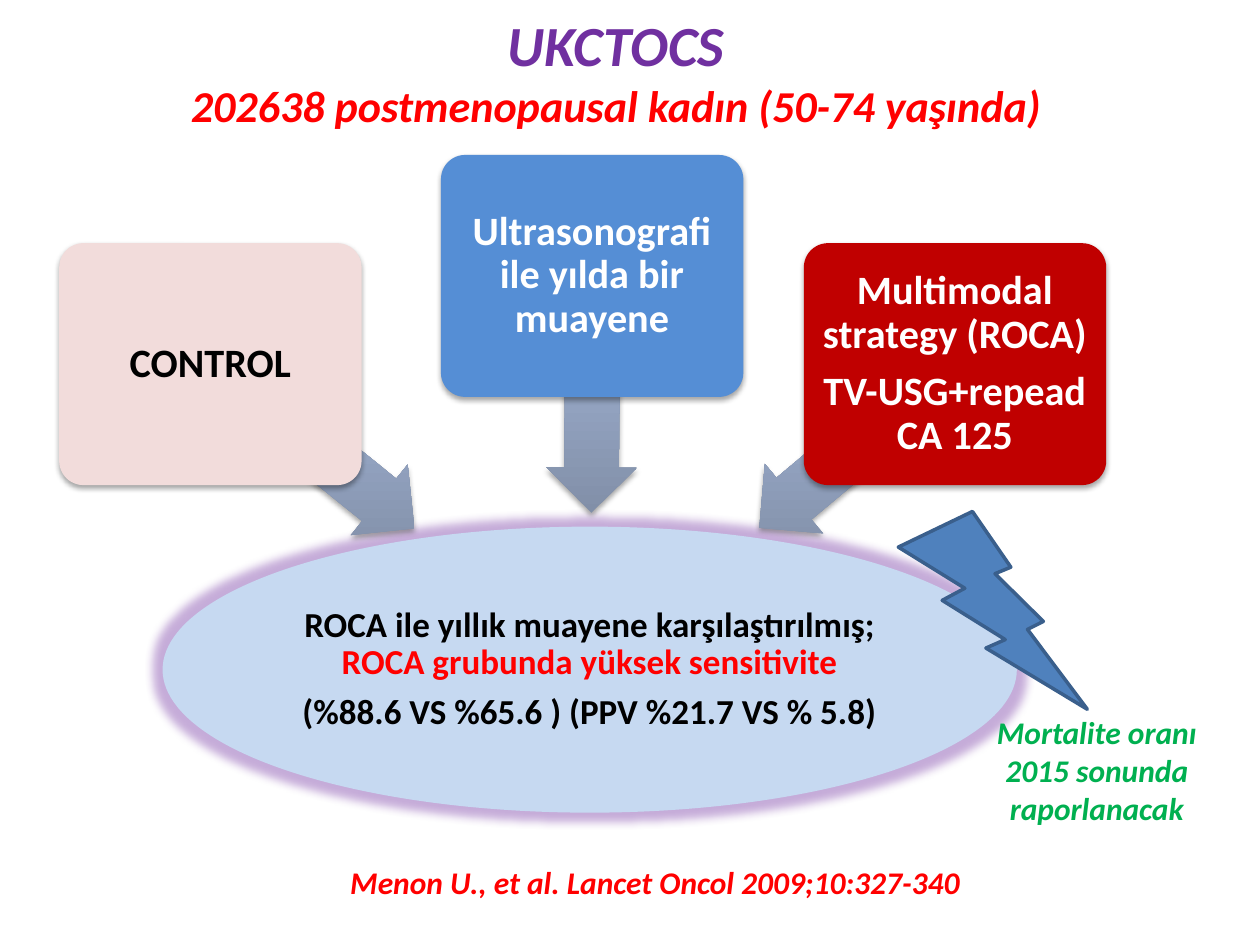
import dataclasses

import pptx
import pptx.dml.color
import pptx.enum.shapes
import pptx.enum.text
import pptx.util
from lxml import etree

Inches = pptx.util.Inches
Pt = pptx.util.Pt
Shapes = pptx.enum.shapes.MSO_SHAPE
DRAWING = "http://schemas.openxmlformats.org/drawingml/2006/main"


@dataclasses.dataclass(frozen=True)
class Theme:
    font: str = "Calibri"
    black: str = "000000"
    white: str = "FFFFFF"
    red: str = "FF0000"
    purple: str = "7030A0"
    green: str = "00B050"
    control: str = "F2DCDB"
    ultrasound: str = "558ED5"
    multimodal: str = "C00000"
    findings: str = "C6D9F1"
    bolt: str = "4F81BD"
    bolt_edge: str = "3A5F8C"
    arrow_dark: str = "818FA8"
    arrow_light: str = "A7BADC"
    title_size: float = 32.4
    subtitle_size: float = 25.2
    arm_size: float = 23
    findings_size: float = 20
    note_size: float = 18


@dataclasses.dataclass(frozen=True)
class Box:
    left: float
    top: float
    width: float
    height: float

    def inches(self):
        return [Inches(v) for v in (self.left, self.top, self.width, self.height)]

    def inner(self, left, top, width, height):
        return Box(self.left + left, self.top + top, width, height)


THEME = Theme()


def rgb(value):
    return pptx.dml.color.RGBColor.from_string(value)


def add_effect(shape, kind, color, alpha, **settings):
    effects = shape.element.spPr.find(f"{{{DRAWING}}}effectLst")
    effect = etree.SubElement(effects, f"{{{DRAWING}}}{kind}",
                              {key: str(value) for key, value in settings.items()})
    tint = etree.SubElement(effect, f"{{{DRAWING}}}srgbClr", val=color)
    etree.SubElement(tint, f"{{{DRAWING}}}alpha", val=str(alpha * 1000))


def add_soft_shadow(shape):
    add_effect(shape, "outerShdw", THEME.black, 35, blurRad=Pt(3.1), dist=Pt(1.8),
               dir=90 * 60000, rotWithShape=0)


def add_plain_shape(slide, preset, box, fill=None):
    shape = slide.shapes.add_shape(preset, *box.inches())
    shape.shadow.inherit = False
    shape.line.fill.background()
    if fill:
        shape.fill.solid()
        shape.fill.fore_color.rgb = rgb(fill)
    else:
        shape.fill.background()
    return shape


def set_insets(frame, inset):
    frame.margin_left = frame.margin_right = Inches(inset)
    frame.margin_top = frame.margin_bottom = Inches(inset)


def write(frame, paragraphs, italic=False, tight=False):
    frame.word_wrap = True
    frame.auto_size = pptx.enum.text.MSO_AUTO_SIZE.NONE
    frame.vertical_anchor = pptx.enum.text.MSO_ANCHOR.MIDDLE
    for index, (size, runs) in enumerate(paragraphs):
        paragraph = frame.add_paragraph() if index else frame.paragraphs[0]
        paragraph.alignment = pptx.enum.text.PP_ALIGN.CENTER
        paragraph.font.name = THEME.font
        paragraph.font.size = Pt(size)
        paragraph.font.bold = True
        paragraph.font.italic = italic
        if tight:
            paragraph.line_spacing = 0.9
            paragraph.space_after = Pt(0.35 * size)
        for text, color in runs:
            run = paragraph.add_run()
            run.text = text
            if len(runs) > 1:
                run.font.color.rgb = rgb(color)
        if len(runs) == 1:
            paragraph.font.color.rgb = rgb(runs[0][1])


def add_heading(slide, box):
    title = slide.shapes.title
    title.left, title.top, title.width, title.height = box.inches()
    frame = title.text_frame
    frame.margin_top = 0
    frame.margin_bottom = Inches(0.34)
    write(frame, [
        (THEME.title_size, [("UKCTOCS", THEME.purple)]),
        (THEME.subtitle_size,
         [("202638 postmenopausal kadın (50-74 yaşında)", THEME.red)]),
    ], italic=True)


def add_findings(slide, box):
    ellipse = add_plain_shape(slide, Shapes.OVAL, box, THEME.findings)
    add_effect(ellipse, "glow", THEME.purple, 40, rad=Pt(11))
    set_insets(ellipse.text_frame, 0.01)
    write(ellipse.text_frame, [
        (THEME.findings_size, [
            ("ROCA ile yıllık muayene karşılaştırılmış; ", THEME.black),
            ("ROCA grubunda yüksek sensitivite", THEME.red)]),
        (THEME.findings_size,
         [("(%88.6 VS %65.6 ) (PPV %21.7 VS % 5.8)", THEME.black)]),
    ], tight=True)


def add_arrow(slide, box, rotation):
    arrow = add_plain_shape(slide, Shapes.LEFT_ARROW, box)
    arrow.rotation = rotation
    arrow.adjustments[0] = 0.6
    arrow.adjustments[1] = 0.5
    arrow.fill.gradient()
    arrow.fill.gradient_angle = 90
    for stop, color in zip(arrow.fill.gradient_stops,
                           (THEME.arrow_dark, THEME.arrow_light)):
        stop.color.rgb = rgb(color)
    arrow.element.spPr.find(f"{{{DRAWING}}}gradFill").set("rotWithShape", "0")
    add_soft_shadow(arrow)


def add_study_arm(slide, box, lines, fill, color):
    arm = add_plain_shape(slide, Shapes.ROUNDED_RECTANGLE, box, fill)
    arm.adjustments[0] = 0.1
    add_soft_shadow(arm)
    set_insets(arm.text_frame, 0.05)
    write(arm.text_frame,
          [(THEME.arm_size, [(line, color)]) for line in lines], tight=True)


def add_study_arms(slide, box):
    arms = [
        (0, 0.7, (0.97, 1.95, 2.08), 218.9, ["CONTROL"],
         THEME.control, THEME.black),
        (3.03, 0, (3.29, 1.54, 1.88), 270.4,
         ["Ultrasonografi ile yılda bir muayene"], THEME.ultrasound, THEME.white),
        (5.91, 0.7, (5.32, 1.95, 2.02), 320,
         ["Multimodal strategy (ROCA)", "TV-USG+repead CA 125"],
         THEME.multimodal, THEME.white),
    ]
    for left, top, arrow, rotation, lines, fill, color in arms:
        add_arrow(slide, box.inner(*arrow, 0.72), rotation)
        add_study_arm(slide, box.inner(left, top, 2.4, 1.92), lines, fill, color)


def add_citation(slide, box):
    citation = slide.shapes.add_textbox(*box.inches())
    write(citation.text_frame, [(THEME.note_size, [
        ("Menon U., et al. Lancet Oncol 2009;10:327-340", THEME.red)])], italic=True)


def add_mortality_note(slide, box):
    bolt = add_plain_shape(slide, Shapes.LIGHTNING_BOLT,
                           box.inner(0, 0, 1.5, 1.57), THEME.bolt)
    bolt.line.color.rgb = rgb(THEME.bolt_edge)
    bolt.line.width = Pt(2)
    note = add_plain_shape(slide, Shapes.FOLDED_CORNER,
                           box.inner(0.55, 1.58, 2.05, 1.13))
    write(note.text_frame, [(THEME.note_size, [
        ("Mortalite oranı 2015 sonunda raporlanacak", THEME.green)])], italic=True)


def main():
    deck = pptx.Presentation()
    deck.slide_width = Inches(10)
    deck.slide_height = Inches(7.5)
    slide = deck.slides.add_slide(deck.slide_layouts[5])
    add_heading(slide, Box(0.43, 0.21, 8.92, 1.04))
    add_findings(slide, Box(1.29, 4.18, 6.78, 2.27))
    add_study_arms(slide, Box(0.47, 1.23, 8.31, 2.95))
    add_citation(slide, Box(1.54, 6.5, 7.32, 1))
    add_mortality_note(slide, Box(7.13, 4.06, 2.6, 2.71))
    deck.save("out.pptx")


if __name__ == "__main__":
    main()
